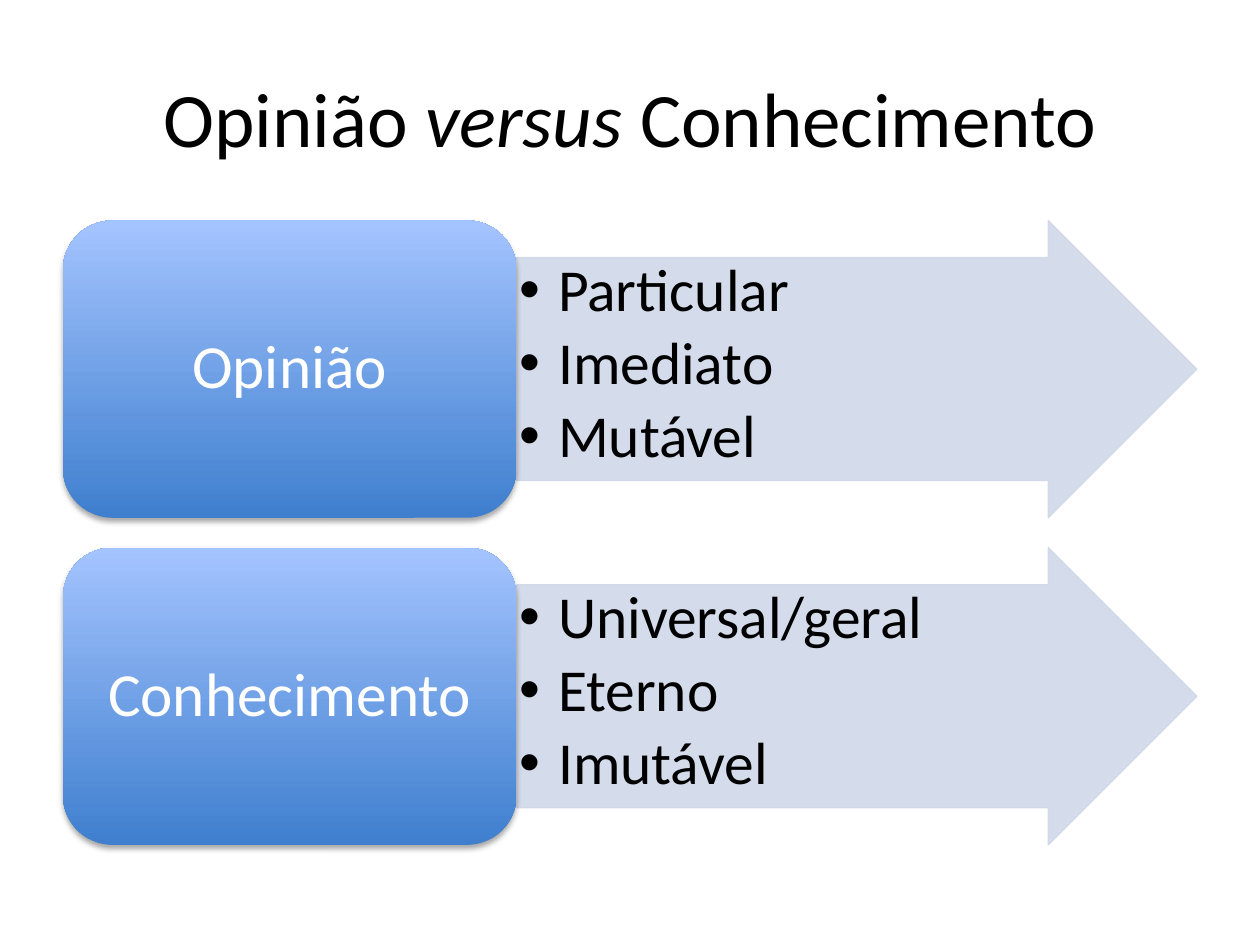
"""Build a slide contrasting opinion and knowledge in two arrow rows."""
from dataclasses import dataclass

from lxml.etree import SubElement
from pptx import Presentation
from pptx.dml.color import RGBColor as RGB
from pptx.enum.shapes import MSO_SHAPE as SHAPE
from pptx.enum.text import MSO_ANCHOR as ANCHOR, PP_ALIGN as ALIGN
from pptx.oxml.ns import qn
from pptx.util import Inches, Pt

TITLE = [("Opinião ", False), ("versus ", True), ("Conhecimento", False)]
ROWS = [
    ("Opinião", ["Particular", "Imediato", "Mutável"]),
    ("Conhecimento", ["Universal/geral", "Eterno", "Imutável"]),
]


@dataclass(frozen=True)
class Theme:
    font: str = "Calibri"
    ink: str = "000000"
    label_ink: str = "FFFFFF"
    arrow: str = "D0D8E8"
    gradient: tuple = ("3F7FCE", "A4C4FF")
    title_size: int = 44
    label_size: int = 35
    trait_size: int = 34


THEME = Theme()
WIDTH, HEIGHT = 10, 7.5
MARGIN = WIDTH * 0.05
CONTENT_WIDTH = WIDTH - 2 * MARGIN
LABEL_WIDTH = CONTENT_WIDTH * 0.4
ROWS_TOP, ROW_HEIGHT = 1.75, 2.36
ROW_PITCH = ROW_HEIGHT * 1.1
HANG = 0.31


def add_run(paragraph, text, size, color, italic=False):
    run = paragraph.add_run()
    run.text = text
    run.font.name, run.font.size, run.font.italic = THEME.font, Pt(size), italic
    run.font.color.rgb = RGB.from_string(color)


def add_block(slide, preset, left, top, width, insets, anchor):
    block = slide.shapes.add_shape(
        preset, Inches(left), Inches(top), Inches(width), Inches(ROW_HEIGHT))
    block.shadow.inherit = False
    frame = block.text_frame
    frame.word_wrap = True
    frame.vertical_anchor = anchor
    frame.margin_left = frame.margin_right = Inches(insets[0])
    frame.margin_top = frame.margin_bottom = Inches(insets[1])
    return block


def set_alpha(parent, percent):
    for color in parent.iter(qn("a:srgbClr")):
        SubElement(color, qn("a:alpha"), val=str(percent * 1000))


def add_bullet(paragraph):
    properties = paragraph._p.get_or_add_pPr()
    properties.set("marL", str(Inches(HANG)))
    properties.set("indent", str(-Inches(HANG)))
    SubElement(properties, qn("a:buFont"), typeface="Arial")
    SubElement(properties, qn("a:buChar"), char="•")


def add_traits(slide, top, traits):
    arrow = add_block(slide, SHAPE.RIGHT_ARROW, MARGIN + LABEL_WIDTH, top,
                      CONTENT_WIDTH - LABEL_WIDTH, (0.02, 0.02), ANCHOR.TOP)
    arrow.adjustments[0], arrow.adjustments[1] = 0.75, 0.5
    arrow.fill.solid()
    arrow.fill.fore_color.rgb = RGB.from_string(THEME.arrow)
    arrow.line.color.rgb = RGB.from_string(THEME.arrow)
    arrow.line.width = Pt(0.75)
    set_alpha(arrow._element.spPr, 90)
    frame = arrow.text_frame
    for index, trait in enumerate(traits):
        paragraph = frame.add_paragraph() if index else frame.paragraphs[0]
        add_bullet(paragraph)
        paragraph.level = 1
        paragraph.alignment = ALIGN.LEFT
        paragraph.line_spacing = 0.9
        paragraph.space_after = Pt(THEME.trait_size * 0.15)
        add_run(paragraph, trait, THEME.trait_size, THEME.ink)


def add_label(slide, top, label):
    card = add_block(slide, SHAPE.ROUNDED_RECTANGLE, MARGIN, top,
                     LABEL_WIDTH, (0.15, 0.07), ANCHOR.MIDDLE)
    card.fill.gradient()
    card.fill.gradient_angle = 90
    for position, (stop, color) in enumerate(
            zip(card.fill.gradient_stops, THEME.gradient)):
        stop.position = position
        stop.color.rgb = RGB.from_string(color)
    card.line.fill.background()
    effects = card._element.spPr.find(qn("a:effectLst"))
    shadow = SubElement(effects, qn("a:outerShdw"), blurRad=str(Pt(3.1)),
                        dist=str(Pt(1.8)), dir="5400000", rotWithShape="0")
    SubElement(shadow, qn("a:srgbClr"), val="000000")
    set_alpha(shadow, 35)
    paragraph = card.text_frame.paragraphs[0]
    paragraph.alignment = ALIGN.CENTER
    paragraph.line_spacing = 0.9
    add_run(paragraph, label, THEME.label_size, THEME.label_ink)


def add_title(slide):
    title = slide.shapes.title
    title.left, title.top = Inches(MARGIN), Inches(0.3)
    title.width, title.height = Inches(CONTENT_WIDTH), Inches(1.25)
    title.text_frame.vertical_anchor = ANCHOR.MIDDLE
    paragraph = title.text_frame.paragraphs[0]
    paragraph.alignment = ALIGN.CENTER
    for text, italic in TITLE:
        add_run(paragraph, text, THEME.title_size, THEME.ink, italic)


def main():
    deck = Presentation()
    deck.slide_width, deck.slide_height = Inches(WIDTH), Inches(HEIGHT)
    slide = deck.slides.add_slide(deck.slide_layouts.get_by_name("Title Only"))
    add_title(slide)
    for index, (label, traits) in enumerate(ROWS):
        top = ROWS_TOP + index * ROW_PITCH
        add_traits(slide, top, traits)
        add_label(slide, top, label)
    deck.save("out.pptx")


if __name__ == "__main__":
    main()
